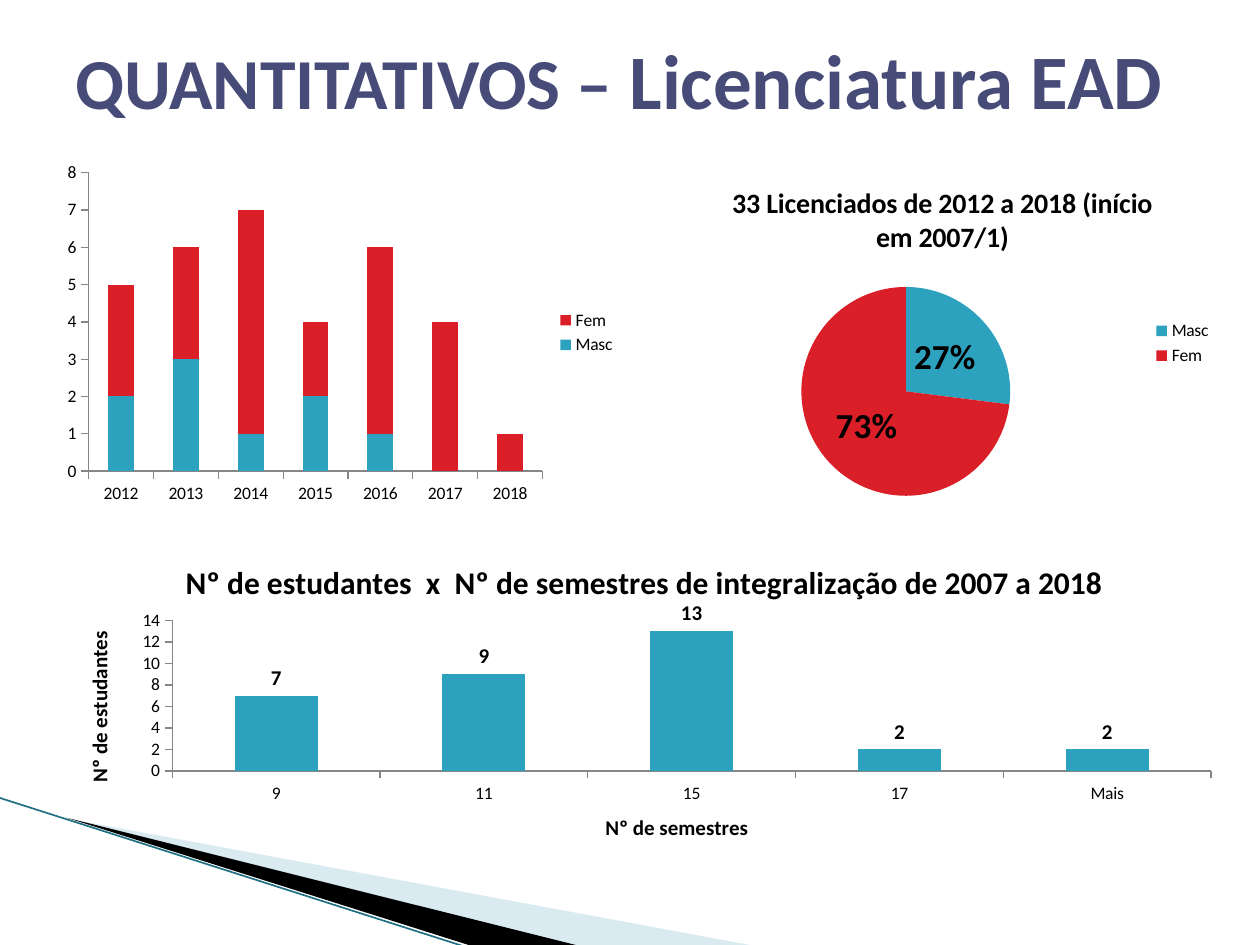
from lxml import etree
from pptx import Presentation
from pptx.chart.data import CategoryChartData as ChartData
from pptx.dml.color import RGBColor
from pptx.enum.chart import XL_CHART_TYPE as Kind, XL_LABEL_POSITION as LabelPos
from pptx.enum.chart import XL_LEGEND_POSITION as LegendPos, XL_TICK_MARK as Tick
from pptx.enum.shapes import MSO_CONNECTOR as Connector
from pptx.enum.text import MSO_ANCHOR as Anchor, PP_ALIGN as Align
from pptx.oxml import parse_xml
from pptx.oxml.ns import nsdecls, qn
from pptx.util import Inches, Pt

INDIGO = RGBColor(0x47, 0x4B, 0x78)
TEAL = RGBColor(0x2D, 0xA2, 0xBF)
RED = RGBColor(0xDA, 0x1F, 0x28)
PALE_BLUE = RGBColor(0xA0, 0xCB, 0xDC)
DARK_TEAL = RGBColor(0x1F, 0x70, 0x83)
GRAY = RGBColor(0x86, 0x86, 0x86)
BLACK = RGBColor(0, 0, 0)


def style_font(font, size, bold=False, color=BLACK):
    values = {"name": "Calibri", "size": Pt(size), "bold": bold}
    for attribute, value in values.items():
        setattr(font, attribute, value)
    font.color.rgb = color


def add_heading(owner, text, size):
    frame = (owner.chart_title if hasattr(owner, "chart_title") else owner.axis_title).text_frame
    frame.text = text
    style_font(frame.paragraphs[0].runs[0].font, size, True)


prs = Presentation()
prs.slide_width, prs.slide_height = Inches(10), Inches(7.5)
slide = prs.slides.add_slide(prs.slide_layouts[5])

wedges = [
    ([(0.55, 6.5), (5.95, 7.5), (4.56, 7.5)], PALE_BLUE, 40),
    ([(0.53, 6.49), (4.57, 7.5), (3.72, 7.5)], BLACK, 100),
]
for corners, color, opacity in wedges:
    points = [(Inches(x), Inches(y)) for x, y in corners]
    builder = slide.shapes.build_freeform(*points[0], scale=1.0)
    builder.add_line_segments(points[1:], close=True)
    wedge = builder.convert_to_shape()
    wedge.shadow.inherit = False
    wedge.fill.solid()
    wedge.fill.fore_color.rgb = color
    wedge.line.fill.background()
    if opacity < 100:
        tint = wedge.fill._xPr.find(".//" + qn("a:srgbClr"))
        etree.SubElement(tint, qn("a:alpha"), val=str(opacity * 1000))

edge = slide.shapes.add_connector(
    Connector.STRAIGHT, Inches(-0.01), Inches(6.33), Inches(3.71), Inches(7.52))
edge.line.color.rgb = DARK_TEAL
edge.line.width = Pt(0.95)
etree.SubElement(edge._element.spPr, qn("a:effectLst"))

title = slide.shapes.title
title_box = {"left": 0.02, "top": 0, "width": 9.79, "height": 1.25}
for attribute, value in title_box.items():
    setattr(title, attribute, Inches(value))
title.text_frame.vertical_anchor = Anchor.MIDDLE
heading = title.text_frame.paragraphs[0]
heading.alignment = Align.CENTER
for text, size in [("QUANTITATIVOS – ", 41), ("Licenciatura EAD", 44)]:
    run = heading.add_run()
    run.text = text
    style_font(run.font, size, True, INDIGO)

charts = [
    {"kind": Kind.COLUMN_STACKED, "box": (0.43, 1.23, 4.56, 2.82),
     "plot": (0.06, 0.05, 0.79, 0.84),
     "categories": ["2012", "2013", "2014", "2015", "2016", "2017", "2018"],
     "series": {"Masc": (2, 3, 1, 2, 1, 0, 0), "Fem": (3, 3, 6, 2, 5, 4, 1)},
     "legend": True, "scale": (8, 1), "overlap": 100},
    {"kind": Kind.PIE, "box": (5.24, 1.31, 4.48, 2.83),
     "plot": (0.25, 0.34, 0.37, 0.59),
     "categories": ["Masc", "Fem"], "series": {"Series 1": (27, 73)},
     "title": ("33 Licenciados de 2012 a 2018 (início em 2007/1)", 16),
     "legend": True, "labels": ("show_percentage", LabelPos.CENTER, 20)},
    {"kind": Kind.COLUMN_CLUSTERED, "box": (0.43, 4.3, 9.37, 2.6),
     "plot": (0.1, 0.24, 0.88, 0.46),
     "categories": ["9", "11", "15", "17", "Mais"],
     "series": {"Series 1": (7, 9, 13, 2, 2)},
     "title": ("Nº de estudantes  x  Nº de semestres de integralização de 2007 a 2018", 18),
     "axis_titles": ("Nº de semestres", "Nº de estudantes"), "scale": (14, 2),
     "labels": ("show_value", LabelPos.OUTSIDE_END, 12)},
]
for settings in charts:
    data = ChartData()
    data.categories = settings["categories"]
    for name, values in settings["series"].items():
        data.add_series(name, values)
    chart = slide.shapes.add_chart(
        settings["kind"], *map(Inches, settings["box"]), data).chart
    style_font(chart.font, 10)
    chart.has_title = "title" in settings
    if chart.has_title:
        add_heading(chart, *settings["title"])
    chart.has_legend = "legend" in settings
    if chart.has_legend:
        chart.legend.position = LegendPos.RIGHT
        chart.legend.include_in_layout = False

    plot_area = chart._chartSpace.chart.plotArea
    for layout in plot_area.findall(qn("c:layout")):
        plot_area.remove(layout)
    x, y, width, height = settings["plot"]
    plot_area.insert(0, parse_xml(
        f'<c:layout {nsdecls("c")}><c:manualLayout><c:layoutTarget val="inner"/>'
        f'<c:xMode val="edge"/><c:yMode val="edge"/><c:x val="{x}"/><c:y val="{y}"/>'
        f'<c:w val="{width}"/><c:h val="{height}"/></c:manualLayout></c:layout>'))

    plot = chart.plots[0]
    if settings["kind"] == Kind.PIE:
        plot.vary_by_categories = True
        colored = [plot.series[0].points[i] for i in range(len(settings["categories"]))]
    else:
        plot.vary_by_categories = False
        plot.gap_width = 150
        plot.overlap = settings.get("overlap", 0)
        colored = plot.series
        for axis in (chart.category_axis, chart.value_axis):
            axis_format = {"has_major_gridlines": False, "major_tick_mark": Tick.OUTSIDE,
                           "minor_tick_mark": Tick.NONE}
            for attribute, value in axis_format.items():
                setattr(axis, attribute, value)
            axis.format.line.color.rgb = GRAY
        scale_max, scale_step = settings["scale"]
        value_format = {"minimum_scale": 0, "maximum_scale": scale_max, "major_unit": scale_step}
        for attribute, value in value_format.items():
            setattr(chart.value_axis, attribute, value)
        if "axis_titles" in settings:
            for axis, text in zip((chart.category_axis, chart.value_axis), settings["axis_titles"]):
                add_heading(axis, text, 12)

    for part, color in zip(colored, (TEAL, RED)):
        part.format.fill.solid()
        part.format.fill.fore_color.rgb = color

    if "labels" in settings:
        shown, position, size = settings["labels"]
        labels = plot.series[0].data_labels
        label_format = {"show_value": False, shown: True, "position": position}
        for attribute, value in label_format.items():
            setattr(labels, attribute, value)
        style_font(labels.font, size, True)

prs.save("out.pptx")
